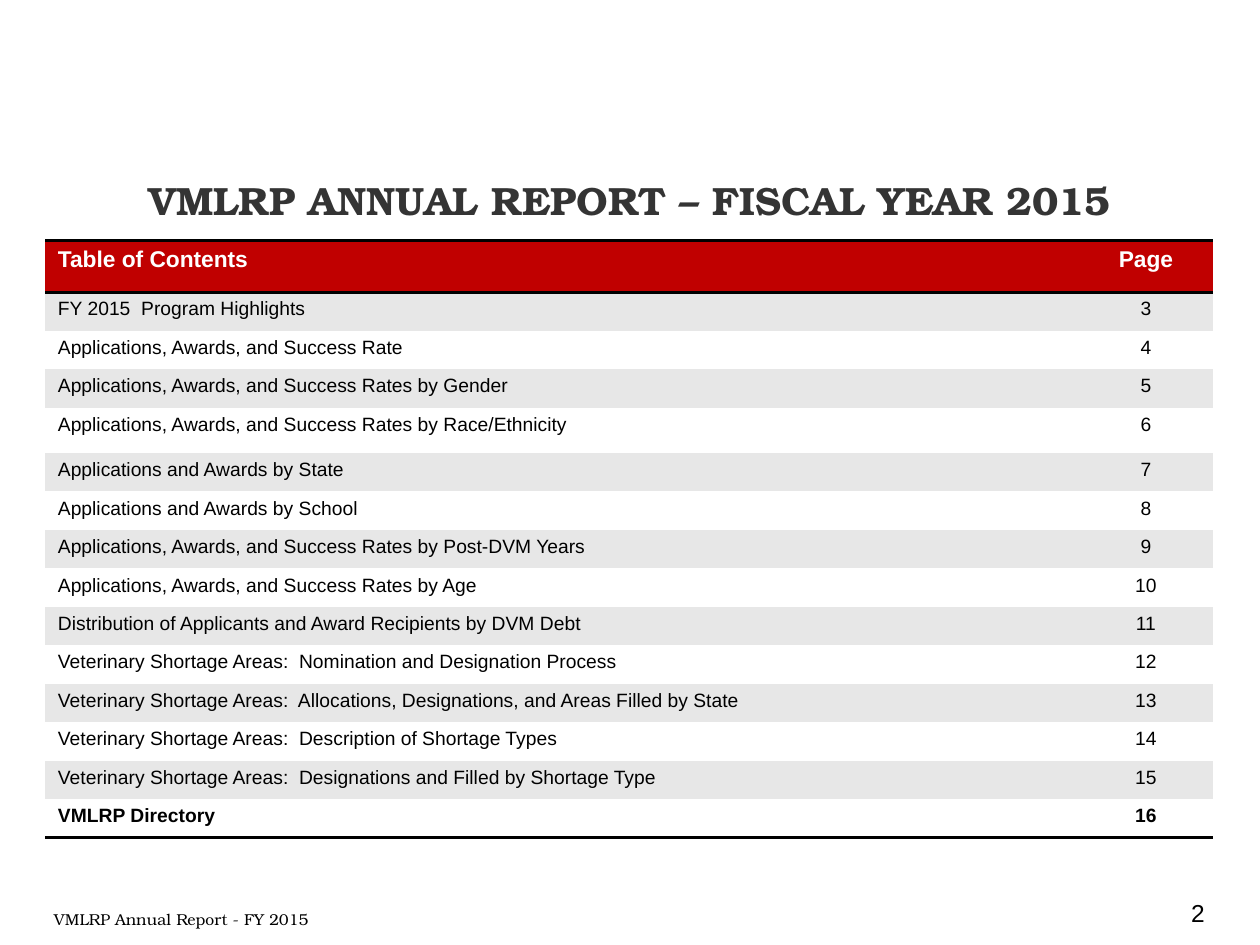
import pptx
import pptx.util
import pptx.dml.color
import pptx.enum.text
import pptx.oxml
import pptx.oxml.ns

COLORS = {"ink": "000000", "title": "343434", "header": "C00000",
          "band": "E7E7E7", "paper": "FFFFFF"}
SERIF, SANS = "TeX Gyre Bonum", "Arial"
GRID_COLS, GRID_ROWS = 100, 75
NO_GRID_STYLE = "{2D5ABB26-0587-4C30-8999-92F81FD0307C}"
ALIGN = pptx.enum.text.PP_ALIGN

CONTENTS = [
    ("Table of Contents", "Page"),
    ("FY 2015  Program Highlights", "3"),
    ("Applications, Awards, and Success Rate", "4"),
    ("Applications, Awards, and Success Rates by Gender", "5"),
    ("Applications, Awards, and Success Rates by Race/Ethnicity", "6"),
    ("Applications and Awards by State", "7"),
    ("Applications and Awards by School", "8"),
    ("Applications, Awards, and Success Rates by Post-DVM Years", "9"),
    ("Applications, Awards, and Success Rates by Age", "10"),
    ("Distribution of Applicants and Award Recipients by DVM Debt", "11"),
    ("Veterinary Shortage Areas:  Nomination and Designation Process", "12"),
    ("Veterinary Shortage Areas:  Allocations, Designations, and Areas Filled by State", "13"),
    ("Veterinary Shortage Areas:  Description of Shortage Types", "14"),
    ("Veterinary Shortage Areas:  Designations and Filled by Shortage Type", "15"),
    ("VMLRP Directory", "16"),
]


class ReportSlide:
    """Holds the current slide and places elements on a 100 by 75 grid."""

    def __init__(self, deck):
        self.col = deck.slide_width / GRID_COLS
        self.row = deck.slide_height / GRID_ROWS
        self.slide = deck.slides.add_slide(deck.slide_layouts[5])

    def box(self, left, top, width, height):
        return [round(length * unit) for length, unit in
                zip((left, top, width, height), (self.col, self.row) * 2)]

    def set_text(self, frame, text, size, font=SANS, color="ink", bold=False,
                 **paragraph_format):
        paragraph = frame.paragraphs[0]
        paragraph.text = text
        for name, value in paragraph_format.items():
            setattr(paragraph, name, value)
        run_font = paragraph.runs[0].font
        for name, value in {"size": pptx.util.Pt(size), "name": font, "bold": bold}.items():
            setattr(run_font, name, value)
        run_font.color.rgb = pptx.dml.color.RGBColor.from_string(COLORS[color])

    def title(self, place, text):
        heading = self.slide.shapes.title
        for name, value in zip(("left", "top", "width", "height"), self.box(*place)):
            setattr(heading, name, value)
        frame_format = {"word_wrap": True,
                        "auto_size": pptx.enum.text.MSO_AUTO_SIZE.NONE,
                        "vertical_anchor": pptx.enum.text.MSO_ANCHOR.BOTTOM}
        for name, value in frame_format.items():
            setattr(heading.text_frame, name, value)
        self.set_text(heading.text_frame, text, 22.5, SERIF, "title", True,
                      alignment=ALIGN.CENTER, line_spacing=0.9)

    def label(self, place, text, size, **style):
        frame = self.slide.shapes.add_textbox(*self.box(*place)).text_frame
        frame.word_wrap = True
        self.set_text(frame, text, size, **style)

    def rule(self, cell, edge):
        """Draw a 2 pt line along one edge of a cell: T or B."""
        cell._tc.get_or_add_tcPr().append(pptx.oxml.parse_xml(
            f'<a:ln{edge} {pptx.oxml.ns.nsdecls("a")} w="{pptx.util.Pt(2)}">'
            f'<a:solidFill><a:srgbClr val="{COLORS["ink"]}"/></a:solidFill></a:ln{edge}>'))

    def contents_table(self, place, entries, page_width, tall_rows):
        """Share the height left by tall_rows equally among the other rows."""
        left, top, width, height = place
        table = self.slide.shapes.add_table(len(entries), 2, *self.box(*place)).table
        table._tbl.tblPr.find(pptx.oxml.ns.qn("a:tableStyleId")).text = NO_GRID_STYLE
        table.horz_banding = False
        for column, span in zip(table.columns, (width - page_width, page_width)):
            column.width = round(span * self.col)
        plain_row = (height - sum(tall_rows.values())) / (len(entries) - len(tall_rows))
        last = len(entries) - 1
        for index, entry in enumerate(entries):
            table.rows[index].height = round(tall_rows.get(index, plain_row) * self.row)
            header = index == 0
            fill = "header" if header else "band" if index % 2 else "paper"
            edges = "TB" if header else "B" if index == last else ""
            for cell, text, alignment in zip(table.rows[index].cells, entry,
                                             (ALIGN.LEFT, ALIGN.CENTER)):
                for edge in edges:
                    self.rule(cell, edge)
                cell.fill.solid()
                cell.fill.fore_color.rgb = pptx.dml.color.RGBColor.from_string(COLORS[fill])
                self.set_text(cell.text_frame, text, 13 if header else 11,
                              color="paper" if header else "ink",
                              bold=index in (0, last), alignment=alignment)


def main():
    deck = pptx.Presentation()
    deck.slide_width, deck.slide_height = pptx.util.Inches(10), pptx.util.Inches(7.5)
    page = ReportSlide(deck)
    page.label((3.3, 71.7, 24.2, 5), "VMLRP Annual Report - FY 2015", 9, font=SERIF)
    page.contents_table((3.6, 19.1, 92.7, 47.4), CONTENTS, page_width=10.7,
                        tall_rows={0: 4.1, 4: 3.6})
    page.title((0.8, 12.5, 98.4, 5.8), "VMLRP ANNUAL REPORT – FISCAL YEAR 2015")
    page.label((75.8, 70.8, 20.8, 5), "2", 14, alignment=ALIGN.RIGHT)
    deck.save("out.pptx")


if __name__ == "__main__":
    main()
